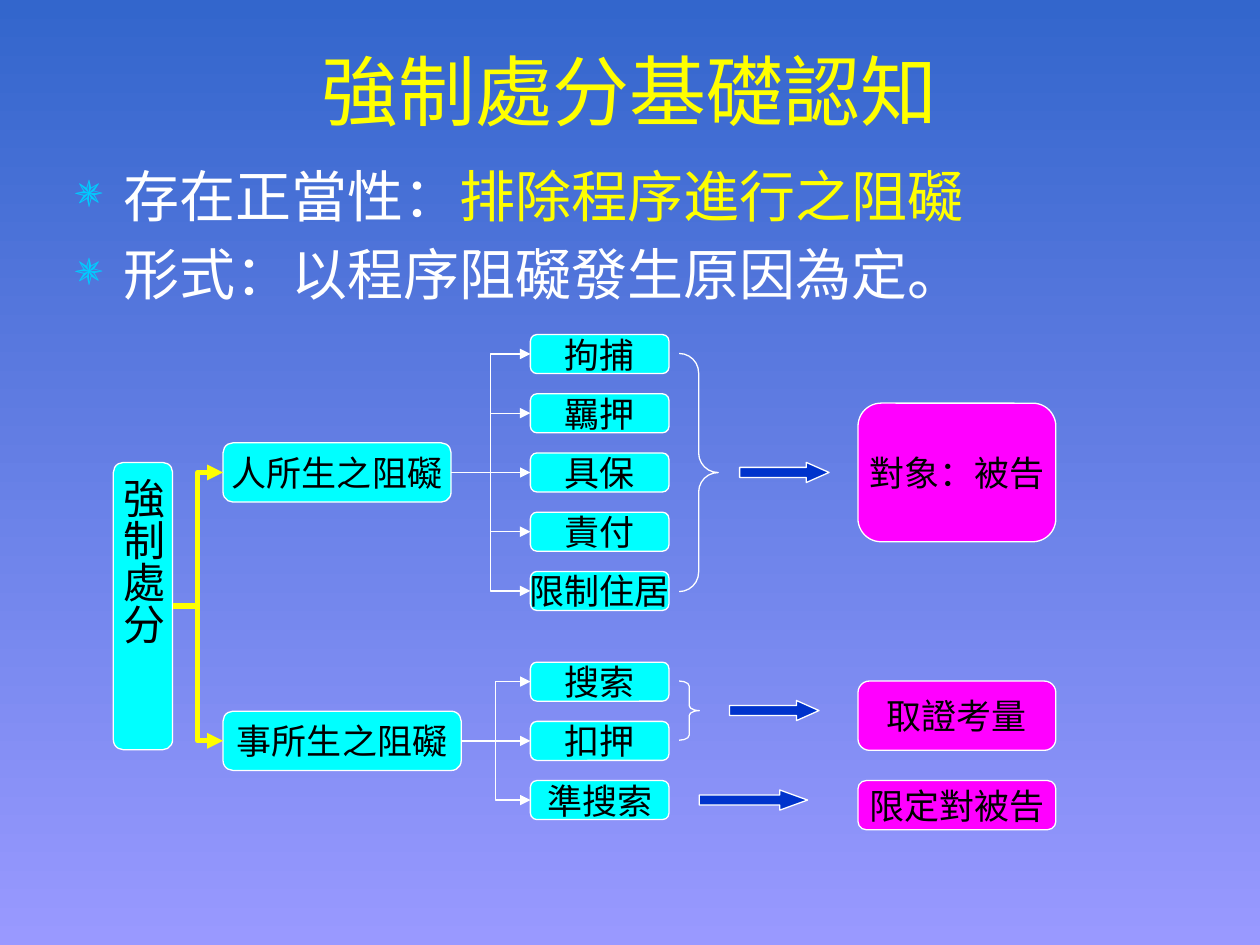
import dataclasses

import lxml.etree
import pptx
import pptx.dml.color
import pptx.enum.shapes
import pptx.enum.text
import pptx.oxml.ns
import pptx.util

Inches = pptx.util.Inches
Pt = pptx.util.Pt
RGB = pptx.dml.color.RGBColor.from_string
SHAPES = pptx.enum.shapes.MSO_SHAPE
CONNECTORS = pptx.enum.shapes.MSO_CONNECTOR
CENTER = pptx.enum.text.PP_ALIGN.CENTER
MIDDLE = pptx.enum.text.MSO_ANCHOR.MIDDLE
LEFT_SITE, RIGHT_SITE = 1, 3


@dataclasses.dataclass(frozen=True)
class Theme:
    sky_top: str = "3366CC"
    sky_bottom: str = "9999FF"
    white: str = "FFFFFF"
    black: str = "000000"
    yellow: str = "FFFF00"
    cyan: str = "00FFFF"
    magenta: str = "FF00FF"
    arrow: str = "0033CC"
    bullet: str = "00CCFF"
    heading_font: str = "Arial"
    diagram_font: str = "Roboto"
    title_size: int = 44
    body_size: int = 32
    root_size: int = 24
    node_size: int = 20
    thin: float = 0.75
    thick: float = 3


THEME = Theme()


def set_format(target, values):
    for name, value in values.items():
        setattr(target, name, value)


def add_child(parent, tag, **attributes):
    return lxml.etree.SubElement(parent, pptx.oxml.ns.qn(tag), attributes)


def add_run(paragraph, text, size, color, font_name):
    run = paragraph.add_run()
    run.text = text
    set_format(run.font, {"size": Pt(size), "name": font_name})
    run.font.color.rgb = RGB(color)


def set_line(line, color, width):
    line.color.rgb = RGB(color)
    line.width = Pt(width)


def paint_background(slide):
    fill = slide.background.fill
    fill.gradient()
    fill.gradient_angle = 270
    colors = (THEME.sky_top, THEME.sky_bottom)
    for position, (stop, color) in enumerate(zip(fill.gradient_stops, colors)):
        stop.position = position
        stop.color.rgb = RGB(color)


def add_title(slide, text):
    frame = slide.shapes.add_textbox(
        Inches(0.33), Inches(0.25), Inches(9.34), Inches(0.93)).text_frame
    set_format(frame, {"word_wrap": True, "vertical_anchor": MIDDLE})
    paragraph = frame.paragraphs[0]
    paragraph.alignment = CENTER
    add_run(paragraph, text, THEME.title_size, THEME.yellow, THEME.heading_font)


def add_bullet(paragraph):
    properties = paragraph._p.get_or_add_pPr()
    properties.set("marL", str(Inches(0.38)))
    properties.set("indent", str(Inches(-0.38)))
    color = add_child(properties, "a:buClr")
    add_child(color, "a:srgbClr", val=THEME.bullet)
    add_child(properties, "a:buSzPct", val="85000")
    add_child(properties, "a:buChar", char="✵")


def add_body(slide, lines):
    frame = slide.shapes.add_textbox(
        Inches(0.5), Inches(1.23), Inches(9), Inches(5.47)).text_frame
    frame.word_wrap = True
    for index, parts in enumerate(lines):
        paragraph = frame.add_paragraph() if index else frame.paragraphs[0]
        paragraph.space_before = Pt(0.2 * THEME.body_size)
        add_bullet(paragraph)
        for text, color in parts:
            add_run(paragraph, text, THEME.body_size, color, THEME.heading_font)


def add_outlined(slide, kind, left, middle, width, height, fill=None, adjustments=()):
    shape = slide.shapes.add_shape(
        kind, Inches(left), Inches(middle - height / 2), Inches(width), Inches(height))
    shape.shadow.inherit = False
    set_line(shape.line, THEME.white, THEME.thin)
    if fill:
        shape.fill.solid()
        shape.fill.fore_color.rgb = RGB(fill)
    else:
        shape.fill.background()
    for index, value in enumerate(adjustments):
        shape.adjustments[index] = value
    return shape


def add_node(slide, text, left, middle, width, height, fill=THEME.cyan, size=THEME.node_size):
    shape = add_outlined(
        slide, SHAPES.FLOWCHART_ALTERNATE_PROCESS, left, middle, width, height, fill)
    frame = shape.text_frame
    set_format(frame, {"word_wrap": False, "vertical_anchor": MIDDLE})
    paragraph = frame.paragraphs[0]
    paragraph.alignment = CENTER
    add_run(paragraph, text, size, THEME.black, THEME.diagram_font)
    return shape


def add_link(slide, source, target, color, width):
    level = abs(source.top + source.height / 2 - target.top - target.height / 2) < Inches(0.02)
    kind = CONNECTORS.STRAIGHT if level else CONNECTORS.ELBOW
    connector = slide.shapes.add_connector(kind, 0, 0, 0, 0)
    connector.begin_connect(source, RIGHT_SITE)
    connector.end_connect(target, LEFT_SITE)
    set_line(connector.line, color, width)
    add_child(connector.line._get_or_add_ln(), "a:tailEnd", type="triangle")
    add_child(connector._element.spPr, "a:effectLst")


def add_branch(slide, root, text, middle, width, leaves, first_leaf):
    branch = add_node(slide, text, 1.77, middle, width, 0.47)
    add_link(slide, root, branch, THEME.yellow, THEME.thick)
    for index, leaf_text in enumerate(leaves):
        leaf = add_node(slide, leaf_text, 4.21, first_leaf + 0.47 * index, 1.1, 0.31)
        add_link(slide, branch, leaf, THEME.white, THEME.thin)


def add_brace(slide, middle, width, height, curve):
    add_outlined(slide, SHAPES.RIGHT_BRACE, 5.39, middle, width, height,
                 adjustments=(curve, 0.5))


def add_outcome(slide, text, middle, height, arrow_left, arrow_middle, arrow_width, head):
    add_outlined(slide, SHAPES.RIGHT_ARROW, arrow_left, arrow_middle, arrow_width, 0.16,
                 THEME.arrow, (0.5, head))
    add_node(slide, text, 6.81, middle, 1.57, height, THEME.magenta)


def main():
    presentation = pptx.Presentation()
    set_format(presentation, {"slide_width": Inches(10), "slide_height": Inches(7.5)})
    slide = presentation.slides.add_slide(presentation.slide_layouts[6])
    paint_background(slide)
    add_title(slide, "強制處分基礎認知")
    add_body(slide, (
        (("存在正當性：", THEME.white), ("排除程序進行之阻礙", THEME.yellow)),
        (("形式：以程序阻礙發生原因為定。", THEME.white),),
    ))

    root = add_node(slide, "強制處分", 0.9, 4.81, 0.47, 2.28, size=THEME.root_size)
    root.text_frame._txBody.bodyPr.set("vert", "eaVert")
    add_branch(slide, root, "人所生之阻礙", 3.75, 1.81,
               ("拘捕", "羈押", "具保", "責付", "限制住居"), 2.81)
    add_branch(slide, root, "事所生之阻礙", 5.88, 1.89,
               ("搜索", "扣押", "準搜索"), 5.41)

    add_brace(slide, 3.75, 0.31, 1.89, 0.5)
    add_brace(slide, 5.64, 0.16, 0.47, 0.25)
    add_outcome(slide, "對象：被告", 3.75, 1.1, 5.87, 3.75, 0.71, 1.13)
    add_outcome(slide, "取證考量", 5.68, 0.55, 5.79, 5.64, 0.71, 1.12)
    add_outcome(slide, "限定對被告", 6.39, 0.39, 5.55, 6.35, 0.86, 1.38)
    presentation.save("out.pptx")


if __name__ == "__main__":
    main()
